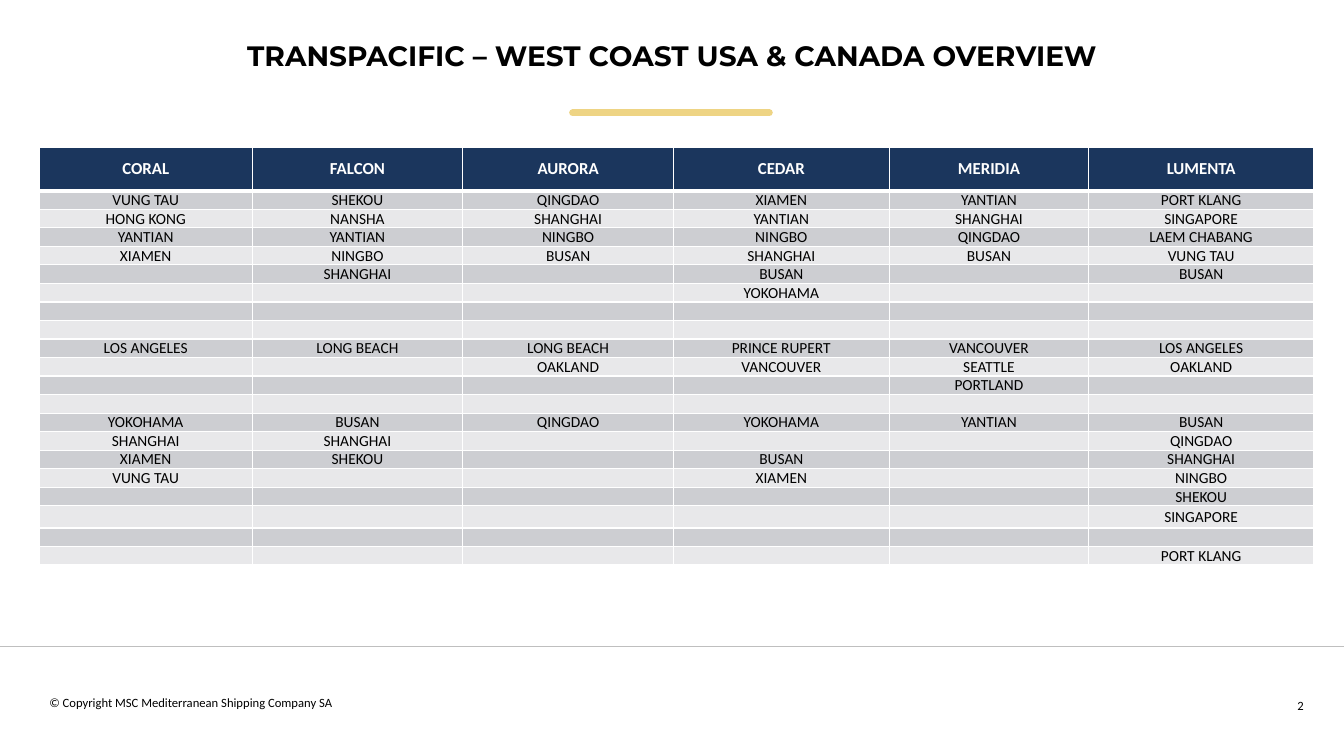
"""Build the Transpacific West Coast overview slide with its port rotation table."""
from lxml import etree
from pptx import Presentation
from pptx import util as u
from pptx.dml.color import RGBColor
from pptx.enum import shapes, text
from pptx.oxml.ns import qn

prs = Presentation()
prs.slide_width, prs.slide_height = u.Inches(13.33), u.Inches(7.5)
X, Y = prs.slide_width / 100, prs.slide_height / 100
s = prs.slides.add_slide(prs.slide_layouts[6])


def rgb(color):
    return RGBColor.from_string(color)


def write(tf, words, size=9, font="Calibri", color="000000", bold=False, align="LEFT", spacing=None):
    p = tf.paragraphs[0]
    p.alignment = getattr(text.PP_ALIGN, align)
    p.line_spacing = spacing
    if not words:
        etree.SubElement(p._p, qn("a:endParaRPr"), sz=str(size * 100))
        return
    r = p.add_run()
    r.text = words
    r.font.size, r.font.name, r.font.bold = u.Pt(size), font, bold
    r.font.color.rgb = rgb(color)


for left, right, top, color, width, cap in [
    (42.61, 57.24, 14.93, "EED484", 5, "rnd"),
    (0, 100, 85.47, "BFBFBF", 0.5, "flat"),
]:
    sp = s.shapes.add_connector(shapes.MSO_CONNECTOR.STRAIGHT,
                                int(left * X), int(top * Y), int(right * X), int(top * Y))
    sp.line.color.rgb, sp.line.width = rgb(color), u.Pt(width)
    sp.line._get_or_add_ln().set("cap", cap)
    etree.SubElement(sp._element.spPr, qn("a:effectLst"))

title = dict(size=20, font="Montserrat", bold=True, align="CENTER", spacing=0.9)
for left, top, width, height, words, style in [
    (3.45, 0, 93.1, 15.33, "TRANSPACIFIC – WEST COAST USA & CANADA OVERVIEW", title),
    (94, 91.6, 3.75, 4.4, "2", dict(align="RIGHT")),
    (2.93, 91.33, 30.23, 4.4, "© Copyright MSC Mediterranean Shipping Company SA", {}),
]:
    tf = s.shapes.add_textbox(int(left * X), int(top * Y), int(width * X), int(height * Y)).text_frame
    tf.word_wrap = True
    if style is title:
        tf.vertical_anchor = text.MSO_ANCHOR.MIDDLE
        tf.margin_left = tf.margin_right = tf.margin_top = tf.margin_bottom = 0
    write(tf, words, **style)

leg_rows = [1, 9, 13]
services = {
    "CORAL": ["VUNG TAU,HONG KONG,YANTIAN,XIAMEN", "LOS ANGELES",
              "YOKOHAMA,SHANGHAI,XIAMEN,VUNG TAU"],
    "FALCON": ["SHEKOU,NANSHA,YANTIAN,NINGBO,SHANGHAI", "LONG BEACH",
               "BUSAN,SHANGHAI,SHEKOU"],
    "AURORA": ["QINGDAO,SHANGHAI,NINGBO,BUSAN", "LONG BEACH,OAKLAND", "QINGDAO"],
    "CEDAR": ["XIAMEN,YANTIAN,NINGBO,SHANGHAI,BUSAN,YOKOHAMA", "PRINCE RUPERT,VANCOUVER",
              "YOKOHAMA,,BUSAN,XIAMEN"],
    "MERIDIA": ["YANTIAN,SHANGHAI,QINGDAO,BUSAN", "VANCOUVER,SEATTLE,PORTLAND", "YANTIAN"],
    "LUMENTA": ["PORT KLANG,SINGAPORE,LAEM CHABANG,VUNG TAU,BUSAN", "LOS ANGELES,OAKLAND",
                "BUSAN,QINGDAO,SHANGHAI,NINGBO,SHEKOU,SINGAPORE,,PORT KLANG"],
}
col_widths = [15.83, 15.68, 15.68, 16.05, 14.85, 16.73]
row_heights = [5.73] + [2.4] * 17 + [2.93] + [2.4] * 2

table = s.shapes.add_table(len(row_heights), len(col_widths), int(2.93 * X), int(19.5 * Y),
                           int(sum(col_widths) * X), int(sum(row_heights) * Y)).table
for col, width in zip(table.columns, col_widths):
    col.width = int(width * X)
for row, height in zip(table.rows, row_heights):
    row.height = int(height * Y)

for c, (service, legs) in enumerate(services.items()):
    ports = {0: service}
    for start, leg in zip(leg_rows, legs):
        ports.update(enumerate(leg.split(","), start))
    for r in range(len(row_heights)):
        cell = table.cell(r, c)
        header = r == 0
        cell.vertical_anchor = text.MSO_ANCHOR.MIDDLE
        cell.margin_left = cell.margin_right = u.Inches(0.13 if header else 0.07)
        cell.margin_top = cell.margin_bottom = u.Inches(0.04 if header else 0)
        for side in "LRTB":
            thick = (header and side == "B") or (r == 1 and side == "T")
            ln = etree.SubElement(cell._tc.get_or_add_tcPr(), qn("a:ln" + side),
                                  w=str(u.Pt(3 if thick else 1)))
            etree.SubElement(etree.SubElement(ln, qn("a:solidFill")), qn("a:srgbClr"), val="FFFFFF")
        cell.fill.solid()
        cell.fill.fore_color.rgb = rgb("1B365D" if header else "CDCED2" if r % 2 else "E8E8EA")
        write(cell.text_frame, ports.get(r), size=12 if header else 11, bold=header,
              color="FFFFFF" if header else "000000", align="CENTER")

prs.save("out.pptx")
